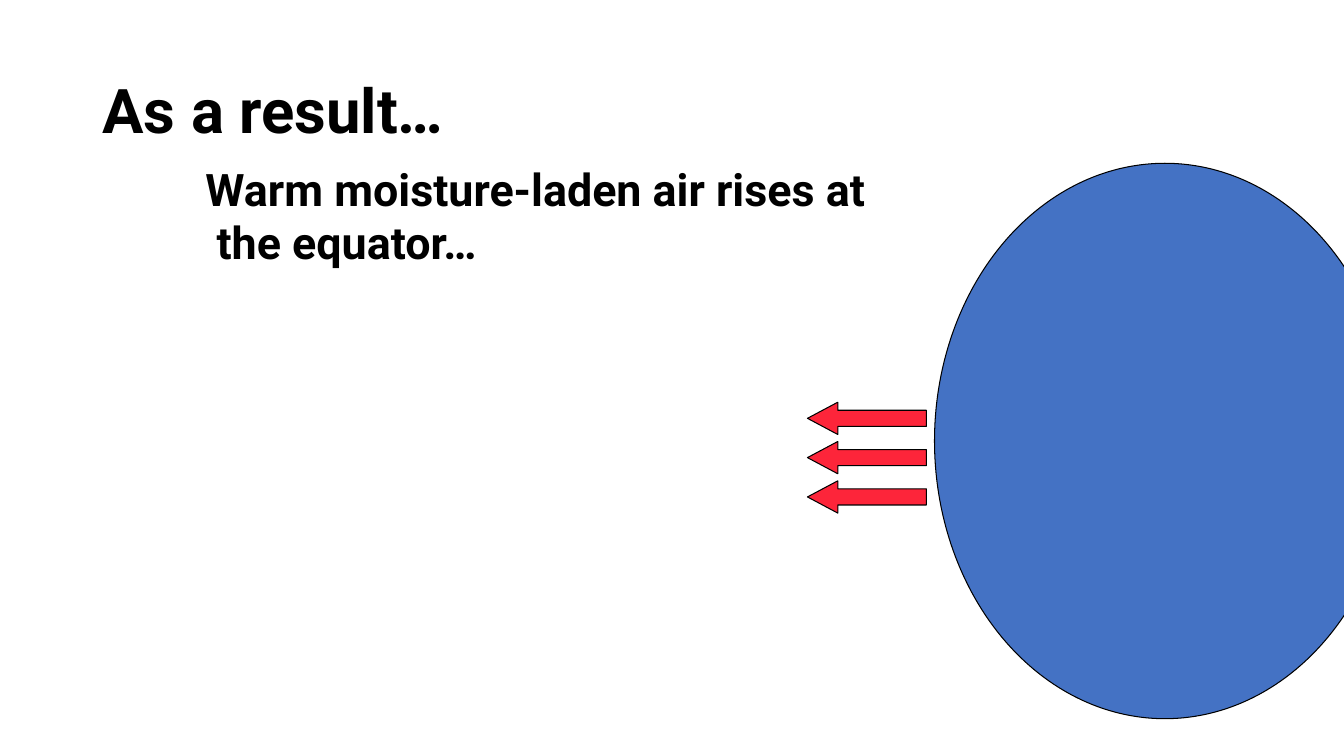
from pptx import Presentation
from pptx import util as u
from pptx.dml.color import RGBColor
from pptx.enum import shapes, text

SLIDE_W, SLIDE_H = u.Inches(13.33), u.Inches(7.5)
COL, ROW = SLIDE_W / 100, SLIDE_H / 100
FONT = "Roboto"
BLACK = RGBColor(0x00, 0x00, 0x00)
GLOBE_BLUE = RGBColor(0x44, 0x72, 0xC4)
WARM_RED = RGBColor(0xFD, 0x25, 0x3A)


def grid(left, top, width, height):
    return [int(n) for n in (left * COL, top * ROW, width * COL, height * ROW)]


def write(tf, *lines, size, anchor=text.MSO_ANCHOR.TOP, spacing=1.0):
    tf.word_wrap = True
    tf.auto_size = text.MSO_AUTO_SIZE.NONE
    tf.vertical_anchor = anchor
    for i, line in enumerate(lines):
        p = tf.paragraphs[0] if i == 0 else tf.add_paragraph()
        p.alignment = text.PP_ALIGN.LEFT
        p.line_spacing = spacing
        r = p.add_run()
        r.text = line
        r.font.name = FONT
        r.font.size = u.Pt(size)
        r.font.bold = True
        r.font.color.rgb = BLACK


def add_title(s, box, line):
    sp = s.shapes.title
    sp.left, sp.top, sp.width, sp.height = box
    write(sp.text_frame, line, size=44, anchor=text.MSO_ANCHOR.MIDDLE, spacing=0.9)


def add_outlined(s, kind, box, fill):
    sp = s.shapes.add_shape(kind, *box)
    sp.shadow.inherit = False
    sp.fill.solid()
    sp.fill.fore_color.rgb = fill
    sp.line.color.rgb = BLACK
    sp.line.width = u.Pt(0.75)
    return sp


def add_air_arrows(s, count, left, top, width, height, pitch):
    for i in range(count):
        box = grid(left, top + i * pitch, width, height)
        sp = add_outlined(s, shapes.MSO_SHAPE.LEFT_ARROW, box, WARM_RED)
        sp.adjustments[0] = 0.5
        sp.adjustments[1] = 0.94


def main():
    prs = Presentation()
    prs.slide_width, prs.slide_height = SLIDE_W, SLIDE_H
    s = prs.slides.add_slide(prs.slide_layouts[5])

    add_title(s, grid(6.88, 5.33, 86.25, 19.33), "As a result…")
    add_outlined(s, shapes.MSO_SHAPE.OVAL, grid(69.53, 21.6, 34.28, 73.47), GLOBE_BLUE)
    caption = s.shapes.add_textbox(*grid(14.55, 20.67, 57.23, 30.13))
    write(caption.text_frame, "Warm moisture-laden air rises at", " the equator…", size=32)
    add_air_arrows(s, 3, left=60.08, top=53.2, width=8.85, height=4.27, pitch=5.2)

    prs.save("out.pptx")


if __name__ == "__main__":
    main()
